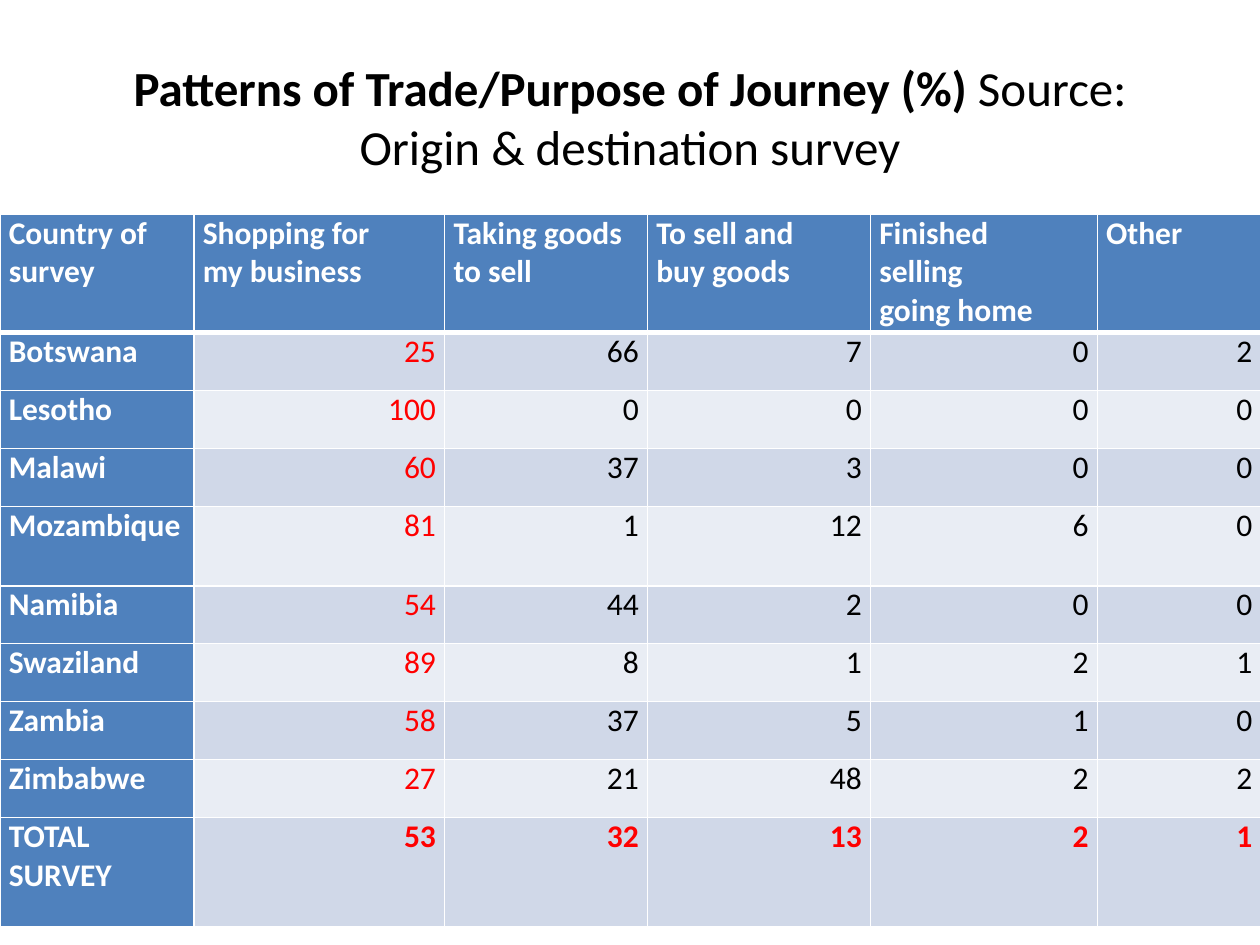
from lxml.etree import SubElement
from pptx import Presentation
from pptx.dml.color import RGBColor
from pptx.enum.text import MSO_ANCHOR, PP_ALIGN
from pptx.oxml.ns import qn
from pptx.util import Inches, Pt

BLACK = RGBColor(0, 0, 0)
WHITE = RGBColor(255, 255, 255)
RED = RGBColor(255, 0, 0)
BLUE = RGBColor(0x4F, 0x81, 0xBD)
DARK = RGBColor(0xD0, 0xD8, 0xE8)
LIGHT = RGBColor(0xE9, 0xED, 0xF4)

HEADS = ["Country of survey", "Shopping for\nmy business", "Taking goods to sell",
         "To sell and\nbuy goods", "Finished\nselling\ngoing home", "Other"]
DATA = [
    ("Botswana", 25, 66, 7, 0, 2),
    ("Lesotho", 100, 0, 0, 0, 0),
    ("Malawi", 60, 37, 3, 0, 0),
    ("Mozambique", 81, 1, 12, 6, 0),
    ("Namibia", 54, 44, 2, 0, 0),
    ("Swaziland", 89, 8, 1, 2, 1),
    ("Zambia", 58, 37, 5, 1, 0),
    ("Zimbabwe", 27, 21, 48, 2, 2),
    ("TOTAL SURVEY", 53, 32, 13, 2, 1),
]
WIDTHS = [1.54, 1.99, 1.61, 1.77, 1.8, 1.3]
HEIGHTS = [0.94] + [0.46] * 3 + [0.63] + [0.46] * 4 + [0.87]


def apply(item, values):
    for name, value in values.items():
        setattr(item, name, value)


class Deck:
    font = "Calibri"
    inset = {"margin_left": Inches(0.07), "margin_right": Inches(0.07),
             "margin_top": 0, "margin_bottom": 0}

    def __init__(self, wide, high):
        self.file = Presentation()
        apply(self.file, {"slide_width": Inches(wide), "slide_height": Inches(high)})
        self.slide = self.file.slides.add_slide(self.file.slide_layouts[6])

    def run(self, para, text, size, color, bold):
        run = para.add_run()
        run.text = text
        apply(run.font, {"name": self.font, "size": Pt(size), "bold": bold})
        run.font.color.rgb = color

    def title(self, box, parts):
        frame = self.slide.shapes.add_textbox(*map(Inches, box)).text_frame
        apply(frame, {"word_wrap": True, "vertical_anchor": MSO_ANCHOR.MIDDLE})
        para = frame.paragraphs[0]
        para.alignment = PP_ALIGN.CENTER
        for text, bold in parts:
            self.run(para, text, 28, BLACK, bold)

    def border(self, cell, sides):
        props = cell._tc.get_or_add_tcPr()
        for side, width in sides.items():
            line = SubElement(props, qn(f"a:ln{side}"), w=str(Pt(width)))
            fill = SubElement(line, qn("a:solidFill"))
            SubElement(fill, qn("a:srgbClr"), val=str(WHITE))

    def cell(self, cell, text, fill, color, bold, align, sides):
        apply(cell, self.inset)
        self.border(cell, sides)
        cell.fill.solid()
        cell.fill.fore_color.rgb = fill
        frame = cell.text_frame
        for i, line in enumerate(text.split("\n")):
            para = frame.add_paragraph() if i else frame.paragraphs[0]
            para.alignment = align
            self.run(para, line, 18, color, bold)

    def table(self, left, top, widths, heights, rows):
        grid = self.slide.shapes.add_table(
            len(rows), len(widths), Inches(left), Inches(top),
            Inches(sum(widths)), Inches(sum(heights))).table
        grid.first_col = True
        for col, width in zip(grid.columns, widths):
            col.width = Inches(width)
        for row, height in zip(grid.rows, heights):
            row.height = Inches(height)
        last = len(rows) - 1
        for r, row in enumerate(rows):
            # A thick rule parts the header from the body
            sides = {"L": 1, "R": 1, "T": 3 if r == 1 else 1, "B": 1 if r else 3}
            for c, value in enumerate(row):
                head = r == 0 or c == 0
                if head:
                    fill, color = BLUE, WHITE
                else:
                    fill = DARK if r % 2 else LIGHT
                    color = RED if c == 1 or r == last else BLACK
                align = PP_ALIGN.LEFT if head else PP_ALIGN.RIGHT
                self.cell(grid.cell(r, c), str(value), fill, color,
                          head or r == last, align, sides)


def main():
    deck = Deck(10, 7.5)

    # Title
    deck.title((0.5, 0.3, 9, 1.25),
               [("Patterns of Trade/Purpose of Journey (%) ", True),
                ("Source: Origin & destination survey", False)])

    # Survey table
    deck.table(0, 1.7, WIDTHS, HEIGHTS, [HEADS] + DATA)

    deck.file.save("out.pptx")


if __name__ == "__main__":
    main()
